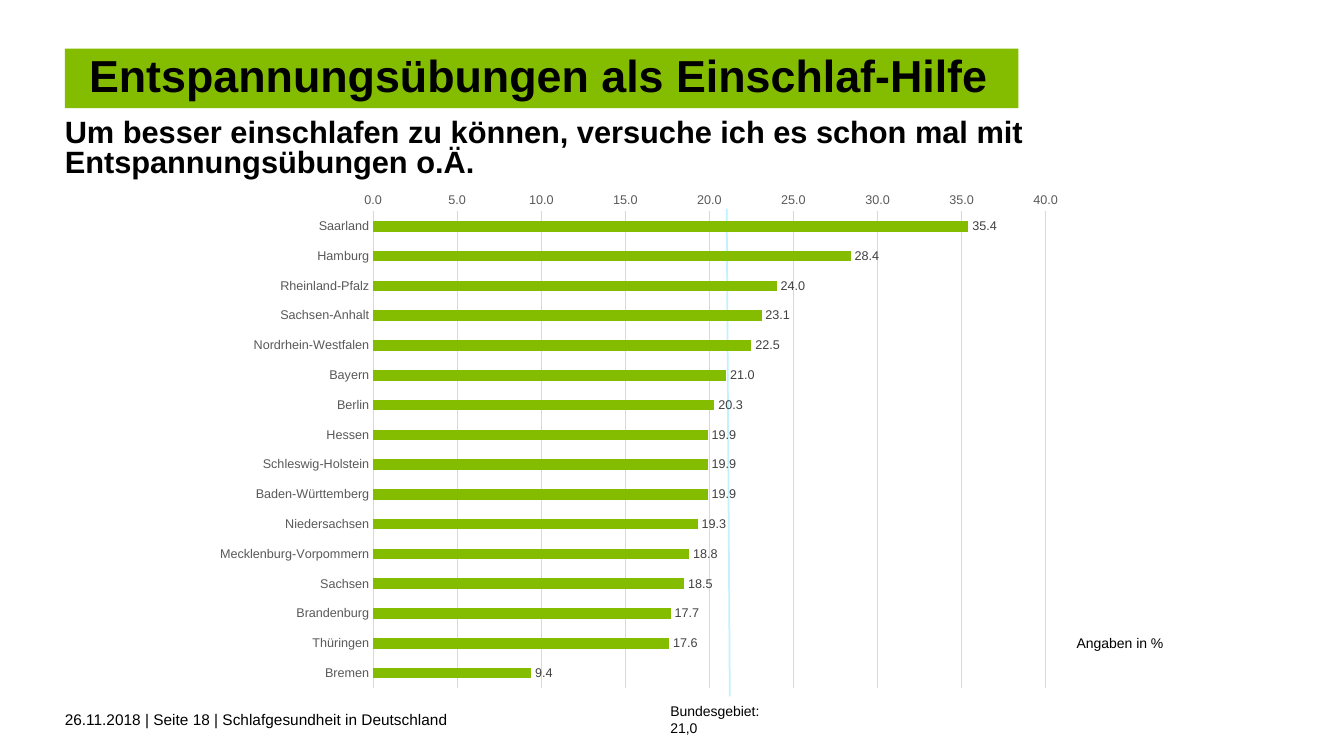
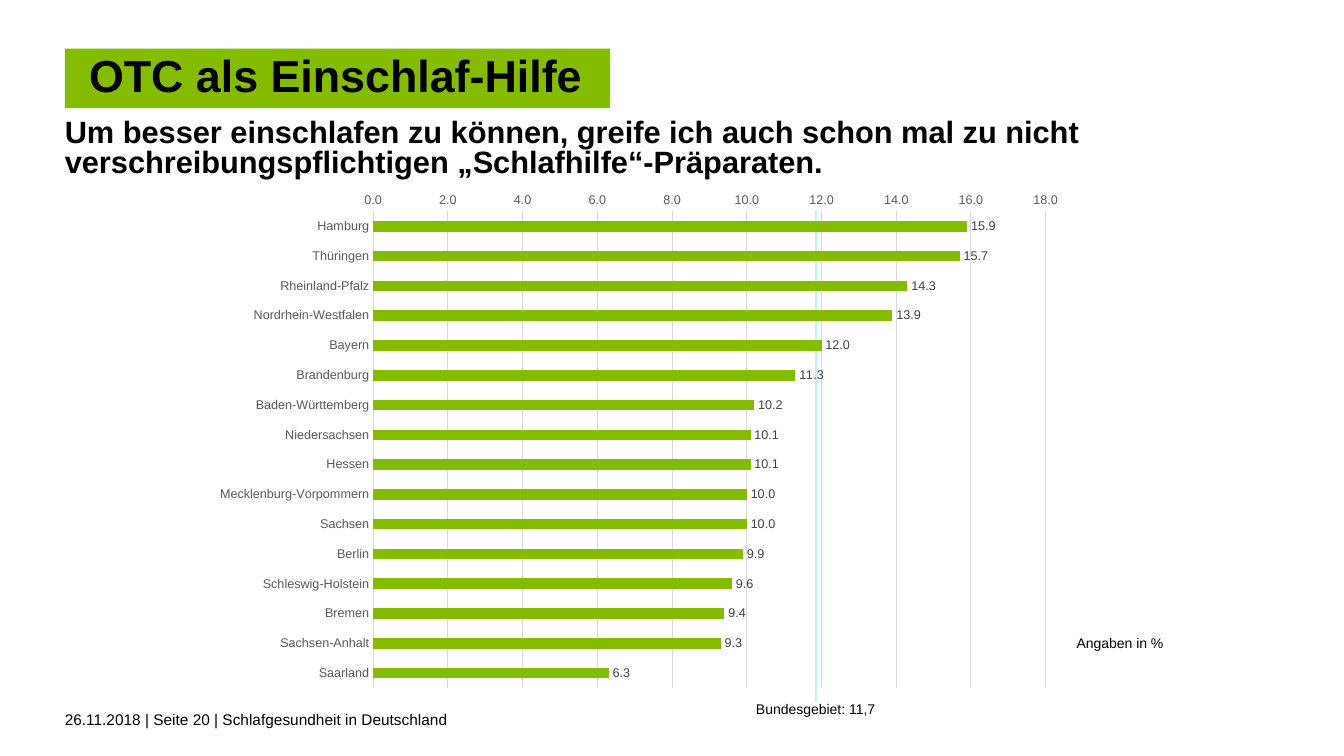
from dataclasses import dataclass

from lxml import etree
from pptx import Presentation
from pptx.chart.data import CategoryChartData
from pptx.dml.color import RGBColor
from pptx.enum import chart as charts, shapes, text
from pptx.oxml import ns
from pptx.util import Pt

FONT = "Arial"
GREEN = "84BD00"
BLACK = "000000"
WHITE = "FFFFFF"
PALE = "C1F2FF"
GRID = "D9D9D9"
GREY = "595959"
DARK = "404040"
LEFT = 46.3
PAD = 17.28


@dataclass(frozen=True)
class Box:
    x: float
    y: float
    w: float
    h: float


@dataclass(frozen=True)
class Line:
    x1: float
    y1: float
    x2: float
    y2: float


@dataclass(frozen=True)
class Page:
    number: int
    title: str
    width: float
    claim: str
    values: dict[str, float]
    top: float
    step: float
    mean: Line
    note: str
    spot: Box


PAGES = [
    Page(
        18,
        "Entspannungsübungen als Einschlaf-Hilfe",
        681.12,
        "Um besser einschlafen zu können, versuche ich es schon mal mit Entspannungsübungen o.Ä.",
        {
            "Saarland": 35.4,
            "Hamburg": 28.4,
            "Rheinland-Pfalz": 24,
            "Sachsen-Anhalt": 23.1,
            "Nordrhein-Westfalen": 22.5,
            "Bayern": 21,
            "Berlin": 20.3,
            "Hessen": 19.9,
            "Schleswig-Holstein": 19.9,
            "Baden-Württemberg": 19.9,
            "Niedersachsen": 19.3,
            "Mecklenburg-Vorpommern": 18.8,
            "Sachsen": 18.5,
            "Brandenburg": 17.7,
            "Thüringen": 17.6,
            "Bremen": 9.4,
        },
        40,
        5,
        Line(519.1, 149, 521.3, 497.5),
        "Bundesgebiet: 21,0",
        Box(461.5, 498.2, 119.5, 19.4),
    ),
    Page(
        20,
        "OTC als Einschlaf-Hilfe",
        389.52,
        "Um besser einschlafen zu können, greife ich auch schon mal zu nicht verschreibungspflichtigen „Schlafhilfe“-Präparaten.",
        {
            "Hamburg": 15.9,
            "Thüringen": 15.7,
            "Rheinland-Pfalz": 14.3,
            "Nordrhein-Westfalen": 13.9,
            "Bayern": 12,
            "Brandenburg": 11.3,
            "Baden-Württemberg": 10.2,
            "Niedersachsen": 10.1,
            "Hessen": 10.1,
            "Mecklenburg-Vorpommern": 10,
            "Sachsen": 10,
            "Berlin": 9.9,
            "Schleswig-Holstein": 9.6,
            "Bremen": 9.4,
            "Sachsen-Anhalt": 9.3,
            "Saarland": 6.3,
        },
        18,
        2,
        Line(582.8, 149.8, 582.8, 501.1),
        "Bundesgebiet: 11,7",
        Box(522.7, 496.8, 121, 19.4),
    ),
]


def tint(code: str) -> RGBColor:
    return RGBColor.from_string(code)


def style(font, size: float, code: str, bold: bool = False) -> None:
    font.name = FONT
    font.size = Pt(size)
    font.bold = bold
    font.color.rgb = tint(code)


def place(shape, box: Box) -> None:
    shape.left, shape.top = Pt(box.x), Pt(box.y)
    shape.width, shape.height = Pt(box.w), Pt(box.h)


def write(shape, words: str, size: float, left: float, right: float,
          bold: bool = False, wrap: bool = True, grow: bool = False):
    frame = shape.text_frame
    frame.text = words
    frame.word_wrap = wrap
    frame.auto_size = (text.MSO_AUTO_SIZE.SHAPE_TO_FIT_TEXT if grow
                       else text.MSO_AUTO_SIZE.NONE)
    frame.margin_left, frame.margin_right = Pt(left), Pt(right)
    frame.margin_top = frame.margin_bottom = Pt(3.6)
    frame.vertical_anchor = text.MSO_ANCHOR.TOP
    para = frame.paragraphs[0]
    para.alignment = text.PP_ALIGN.LEFT
    para.space_before = Pt(0)
    style(para.font, size, BLACK, bold)
    return para


def label(slide, words: str, box: Box) -> None:
    shape = slide.shapes.add_textbox(0, 0, 0, 0)
    place(shape, box)
    write(shape, words, 10, PAD, PAD, grow=True)


def head(slide, page: Page) -> None:
    title = slide.shapes.title
    place(title, Box(LEFT, 34.8, page.width, 42.5))
    title.fill.solid()
    title.fill.fore_color.rgb = tint(GREEN)
    para = write(title, page.title, 32, PAD, PAD, bold=True, wrap=False)
    para.line_spacing = 0.9

    body = slide.placeholders[1]
    place(body, Box(LEFT, 81.4, 867.6, 50))
    para = write(body, page.claim, 22, 0, 7.2, bold=True)
    para.line_spacing = Pt(21.6)
    props = para._p.get_or_add_pPr()
    props.set("marL", "0")
    props.set("indent", "0")
    bullet = etree.Element(ns.qn("a:buNone"))
    props.insert_element_before(bullet, "a:tabLst", "a:defRPr", "a:extLst")


def rule(slide, line: Line) -> None:
    mark = slide.shapes.add_connector(
        shapes.MSO_CONNECTOR.STRAIGHT,
        Pt(line.x1), Pt(line.y1), Pt(line.x2), Pt(line.y2))
    mark.line.color.rgb = tint(PALE)
    mark.line.width = Pt(1.25)
    etree.SubElement(mark._element.spPr, ns.qn("a:effectLst"))


def thin(line) -> None:
    line.color.rgb = tint(GRID)
    line.width = Pt(0.75)


def bars(slide, page: Page) -> None:
    data = CategoryChartData(number_format="0.0")
    data.categories = list(page.values)
    data.add_series("Series 1", list(page.values.values()))
    chart = slide.shapes.add_chart(
        charts.XL_CHART_TYPE.BAR_CLUSTERED,
        Pt(144.7), Pt(130.3), Pt(623.5), Pt(368.6), data).chart
    chart.has_title = False
    chart.has_legend = False
    style(chart.font, 10, BLACK)

    names, scale = chart.category_axis, chart.value_axis
    for axis in (names, scale):
        axis.major_tick_mark = charts.XL_TICK_MARK.NONE
        axis.minor_tick_mark = charts.XL_TICK_MARK.NONE
        style(axis.tick_labels.font, 9, GREY)
    names.reverse_order = True
    thin(names.format.line)
    scale.minimum_scale = 0
    scale.maximum_scale = page.top
    scale.major_unit = page.step
    scale.tick_labels.number_format = "0.0"
    scale.tick_labels.number_format_is_linked = False
    scale.format.line.fill.background()
    scale.has_major_gridlines = True
    thin(scale.major_gridlines.format.line)

    plot = chart.plots[0]
    plot.gap_width = 182
    plot.vary_by_categories = False
    series = plot.series[0]
    series.format.fill.solid()
    series.format.fill.fore_color.rgb = tint(GREEN)
    marks = series.data_labels
    marks.show_value = True
    marks.position = charts.XL_LABEL_POSITION.OUTSIDE_END
    marks.number_format = "0.0"
    marks.number_format_is_linked = False
    style(marks.font, 9, DARK)


def foot(slide, number: int) -> None:
    shape = slide.shapes.add_textbox(0, 0, 0, 0)
    place(shape, Box(LEFT, 503.6, 576, 28.8))
    write(shape, f"26.11.2018 | Seite {number} | Schlafgesundheit in Deutschland",
          11, 0, 7.2)


def build(deck, page: Page) -> None:
    slide = deck.slides.add_slide(deck.slide_layouts[1])
    head(slide, page)
    foot(slide, page.number)
    rule(slide, page.mean)
    bars(slide, page)
    label(slide, "Angaben in %", Box(751.7, 449.6, 131.8, 19.4))
    label(slide, page.note, page.spot)


def main() -> None:
    deck = Presentation()
    deck.slide_width, deck.slide_height = Pt(960), Pt(540)
    back = deck.slide_master.background.fill
    back.solid()
    back.fore_color.rgb = tint(WHITE)
    for page in PAGES:
        build(deck, page)
    deck.save("out.pptx")


if __name__ == "__main__":
    main()
